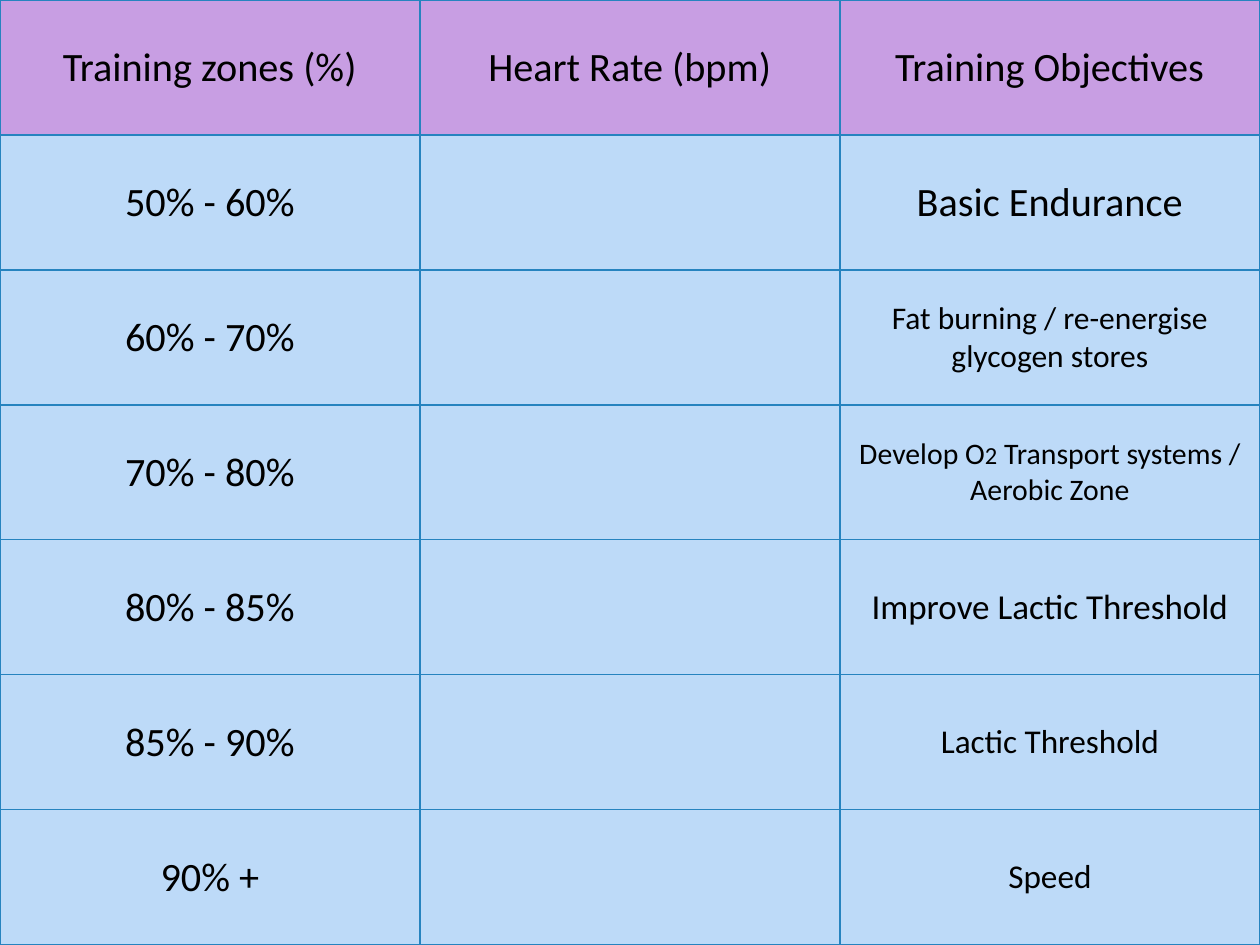
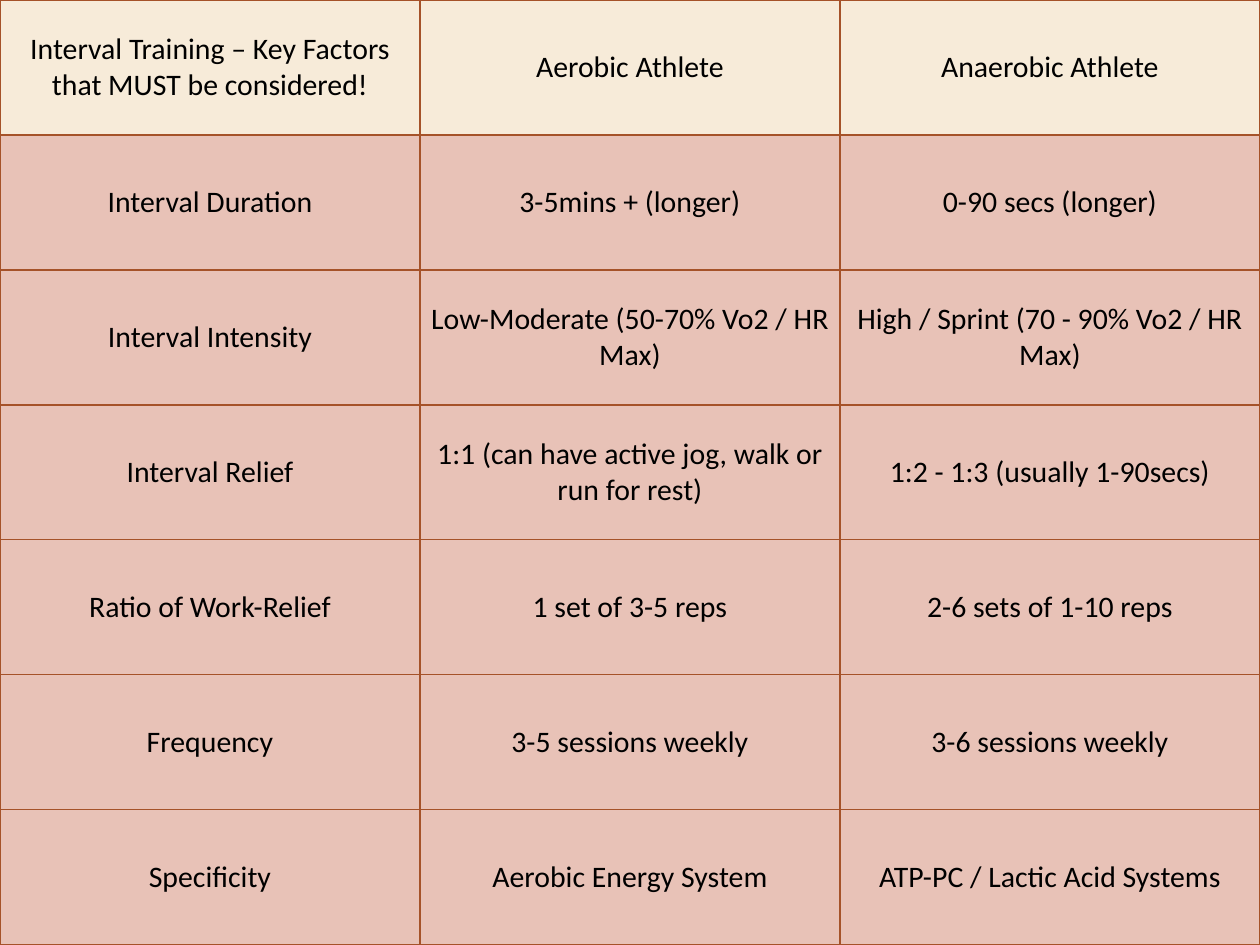
from lxml import etree
from pptx import Presentation
from pptx.dml.color import RGBColor
from pptx.enum.text import MSO_ANCHOR, PP_ALIGN
from pptx.oxml.ns import qn
from pptx.util import Inches, Pt

CENTER = PP_ALIGN.CENTER
MIDDLE = MSO_ANCHOR.MIDDLE
BLANK_LAYOUT = 6

ZONES_HEADER = ["Training zones (%)", "Heart Rate (bpm)", "Training Objectives"]
ZONES = [
    ("50% - 60%", [("Basic Endurance", 23)]),
    ("60% - 70%", [("Fat burning / re-energise glycogen stores", 18)]),
    ("70% - 80%", [("Develop O", 17), ("2", 14), (" Transport systems / Aerobic Zone", 17)]),
    ("80% - 85%", [("Improve Lactic Threshold", 20)]),
    ("85% - 90%", [("Lactic Threshold", 19)]),
    ("90% +", [("Speed", 19)]),
]
INTERVAL_FACTORS = [
    ["Interval Training – Key Factors that MUST be considered!", "Aerobic Athlete", "Anaerobic Athlete"],
    ["Interval Duration", "3-5mins + (longer)", "0-90 secs (longer)"],
    ["Interval Intensity", "Low-Moderate (50-70% Vo2 / HR Max)", "High / Sprint (70 - 90% Vo2 / HR Max)"],
    ["Interval Relief", "1:1 (can have active jog, walk or run for rest)", "1:2 - 1:3 (usually 1-90secs)"],
    ["Ratio of Work-Relief", "1 set of 3-5 reps", "2-6 sets of 1-10 reps"],
    ["Frequency", "3-5 sessions weekly", "3-6 sessions weekly"],
    ["Specificity", "Aerobic Energy System", "ATP-PC / Lactic Acid Systems"],
]


def color(hex_value):
    return RGBColor.from_string(hex_value)


class Deck:
    font = "Calibri"
    ink = "000000"
    backdrop = ("FFFFFF", "B9B9B9")
    inset = Inches(0.04)
    border_width = Pt(0.75)

    def __init__(self):
        self.prs = Presentation()
        self.prs.slide_width = Inches(10)
        self.prs.slide_height = Inches(7.5)
        self.slide = None

    def new_slide(self):
        self.slide = self.prs.slides.add_slide(self.prs.slide_layouts[BLANK_LAYOUT])
        fill = self.slide.background.fill
        fill.gradient()
        fill.gradient_angle = 270
        for stop, shade in zip(fill.gradient_stops, self.backdrop):
            stop.color.rgb = color(shade)

    def full_table(self, rows, size, header_fill, body_fill, border):
        width, height = self.prs.slide_width, self.prs.slide_height
        table = self.slide.shapes.add_table(len(rows), len(rows[0]), 0, 0, width, height).table
        table.horz_banding = False
        for column in table.columns:
            column.width = round(width / len(rows[0]))
        for row in table.rows:
            row.height = round(height / len(rows))
        for r, row in enumerate(rows):
            for c, content in enumerate(row):
                cell = table.cell(r, c)
                self.outline(cell, border)
                cell.fill.solid()
                cell.fill.fore_color.rgb = color(body_fill if r else header_fill)
                self.cell_text(cell, content, size)

    def outline(self, cell, border):
        properties = cell._tc.get_or_add_tcPr()
        for side in ("a:lnL", "a:lnR", "a:lnT", "a:lnB"):
            line = etree.SubElement(properties, qn(side), w=str(self.border_width))
            fill = etree.SubElement(line, qn("a:solidFill"))
            etree.SubElement(fill, qn("a:srgbClr"), val=border)

    def cell_text(self, cell, content, size):
        cell.vertical_anchor = MIDDLE
        cell.margin_left = cell.margin_right = self.inset
        cell.margin_top = cell.margin_bottom = self.inset
        paragraph = cell.text_frame.paragraphs[0]
        paragraph.alignment = CENTER
        pieces = [(content, size)] if isinstance(content, str) else content
        for text, piece_size in pieces:
            if text:
                run = paragraph.add_run()
                run.text = text
                if len(pieces) > 1:
                    run.font.size = Pt(piece_size)
        font = paragraph.font
        font.name = self.font
        font.size = Pt(pieces[0][1])
        font.bold = False
        font.color.rgb = color(self.ink)


def main():
    deck = Deck()

    deck.new_slide()
    zone_rows = [ZONES_HEADER] + [[zone, "", objective] for zone, objective in ZONES]
    deck.full_table(zone_rows, 23, header_fill="C89EE3", body_fill="BDDAF8", border="2683BF")

    deck.new_slide()
    deck.full_table(INTERVAL_FACTORS, 17, header_fill="F7EBD9", body_fill="E8C2B7", border="A55229")

    deck.prs.save("out.pptx")


if __name__ == "__main__":
    main()
